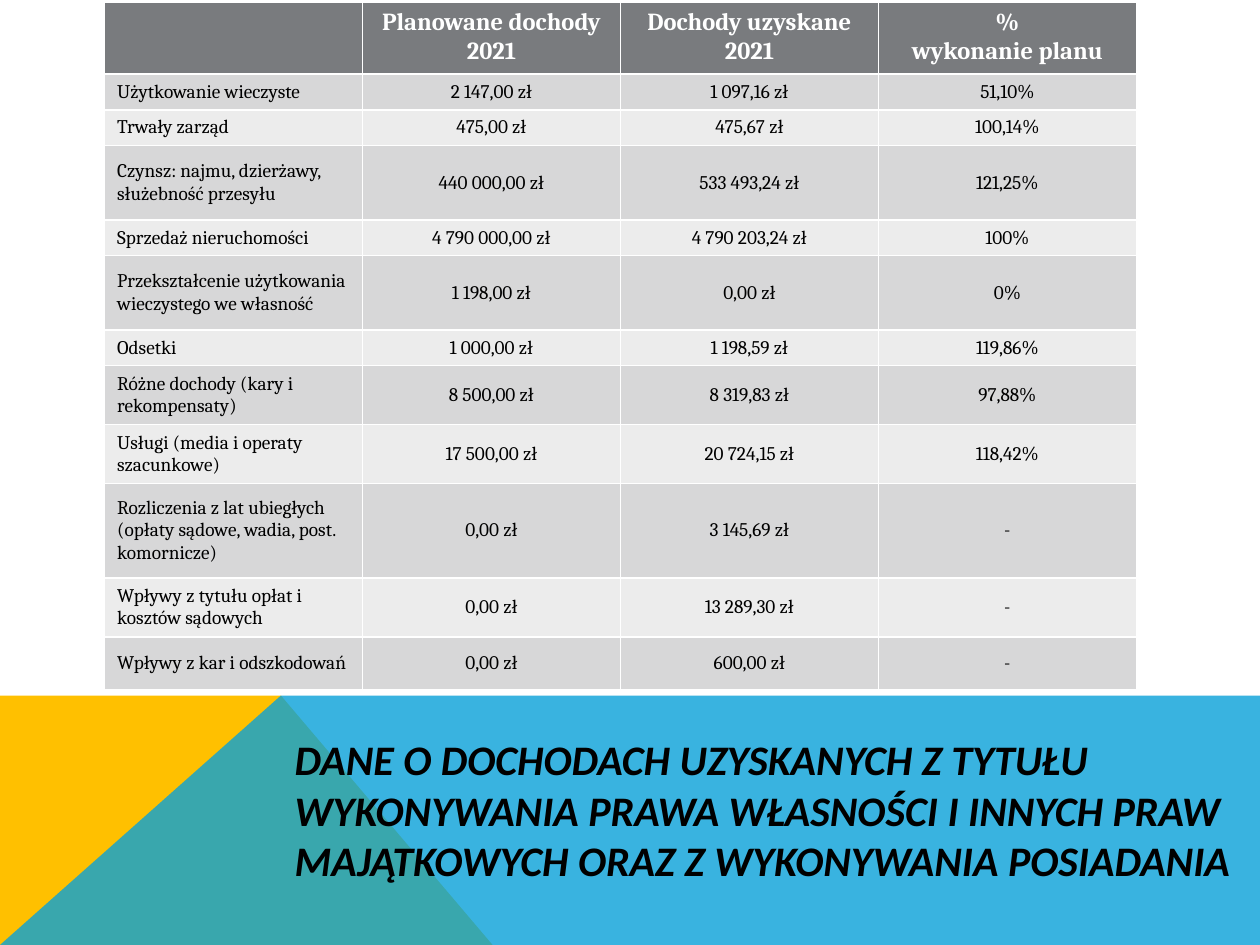
from lxml.etree import SubElement
from pptx import Presentation
from pptx.dml.color import RGBColor
from pptx.enum.text import MSO_ANCHOR, PP_ALIGN
from pptx.oxml.ns import qn
from pptx.util import Inches, Pt

WIDTH, HEIGHT = 10, 7.5
BAND_TOP, PEAK = 5.52, 2.23
TITLE = ("DANE O DOCHODACH UZYSKANYCH Z TYTUŁU WYKONYWANIA PRAWA WŁASNOŚCI "
         "I INNYCH PRAW MAJĄTKOWYCH ORAZ Z WYKONYWANIA POSIADANIA")
TITLE_FORMAT = {"name": "Calibri", "size": Pt(24), "bold": True, "italic": True}
HEADER_FORMAT = {"name": "Cambria", "size": Pt(14), "bold": True}
BODY_FORMAT = {"name": "Cambria", "size": Pt(11), "bold": False}
HEADER = ("", "Planowane dochody 2021", "Dochody uzyskane 2021", "%\nwykonanie planu")
INCOME = (
    (0.28, "Użytkowanie wieczyste", "2 147,00 zł", "1 097,16 zł", "51,10%"),
    (0.28, "Trwały zarząd", "475,00 zł", "475,67 zł", "100,14%"),
    (0.59, "Czynsz: najmu, dzierżawy, służebność przesyłu",
     "440 000,00 zł", "533 493,24 zł", "121,25%"),
    (0.28, "Sprzedaż nieruchomości", "4 790 000,00 zł", "4 790 203,24 zł", "100%"),
    (0.59, "Przekształcenie użytkowania wieczystego we własność",
     "1 198,00 zł", "0,00 zł", "0%"),
    (0.28, "Odsetki", "1 000,00 zł", "1 198,59 zł", "119,86%"),
    (0.45, "Różne dochody (kary i rekompensaty)", "8 500,00 zł", "8 319,83 zł", "97,88%"),
    (0.45, "Usługi (media i operaty szacunkowe)", "17 500,00 zł", "20 724,15 zł", "118,42%"),
    (0.75, "Rozliczenia z lat ubiegłych (opłaty sądowe, wadia, post. komornicze)",
     "0,00 zł", "3 145,69 zł", "-"),
    (0.45, "Wpływy z tytułu opłat i kosztów sądowych", "0,00 zł", "13 289,30 zł", "-"),
    (0.42, "Wpływy z kar i odszkodowań", "0,00 zł", "600,00 zł", "-"),
)


def paint(fill, color):
    fill.solid()
    fill.fore_color.rgb = RGBColor.from_string(color)


def write(frame, text, values, color, align):
    frame.text = text
    for para in frame.paragraphs:
        para.alignment = align
        for span in para.runs:
            for name, value in values.items():
                setattr(span.font, name, value)
            span.font.color.rgb = RGBColor.from_string(color)


def add_polygon(page, points, color, opacity=100):
    start, *rest = [(Inches(x), Inches(y)) for x, y in points]
    builder = page.shapes.build_freeform(*start, scale=1.0)
    builder.add_line_segments(rest, close=True)
    shape = builder.convert_to_shape()
    shape.shadow.inherit = False
    shape.line.fill.background()
    paint(shape.fill, color)
    if opacity < 100:
        tone = shape.fill._xPr.find(".//" + qn("a:srgbClr"))
        SubElement(tone, qn("a:alpha"), val=str(opacity * 1000))


def add_title(page):
    box = page.shapes.add_textbox(Inches(2.24), Inches(6.11), Inches(8.22), Inches(0.63))
    frame = box.text_frame
    frame.word_wrap = True
    frame.vertical_anchor = MSO_ANCHOR.MIDDLE
    write(frame, TITLE, TITLE_FORMAT, "000000", PP_ALIGN.LEFT)


def add_income_table(page):
    rows = [(0.55, *HEADER), *INCOME]
    total = sum(row[0] for row in rows)
    table = page.shapes.add_table(len(rows), len(HEADER), Inches(0.83), Inches(0.02),
                                  Inches(8.19), Inches(total)).table
    for index, (height, *texts) in enumerate(rows):
        table.rows[index].height = Inches(height)
        is_header = index == 0
        band = "797B7E" if is_header else ("ECECEC", "D7D7D8")[index % 2]
        for column, text in enumerate(texts):
            cell = table.cell(index, column)
            paint(cell.fill, band)
            cell.vertical_anchor = MSO_ANCHOR.TOP if is_header else MSO_ANCHOR.MIDDLE
            write(cell.text_frame, text, HEADER_FORMAT if is_header else BODY_FORMAT,
                  "FFFFFF" if is_header else "000000",
                  PP_ALIGN.CENTER if column else PP_ALIGN.LEFT)


def main():
    deck = Presentation()
    deck.slide_width, deck.slide_height = Inches(WIDTH), Inches(HEIGHT)
    page = deck.slides.add_slide(deck.slide_layouts[6])
    paint(page.background.fill, "FFFFFF")
    add_polygon(page, [(0, HEIGHT), (0, BAND_TOP), (PEAK, BAND_TOP), (3.91, HEIGHT)], "FFC000")
    add_polygon(page, [(0, HEIGHT), (PEAK, BAND_TOP), (WIDTH, BAND_TOP), (WIDTH, HEIGHT)],
                "08A1D9", 80)
    add_title(page)
    add_income_table(page)
    deck.save("out.pptx")


if __name__ == "__main__":
    main()
